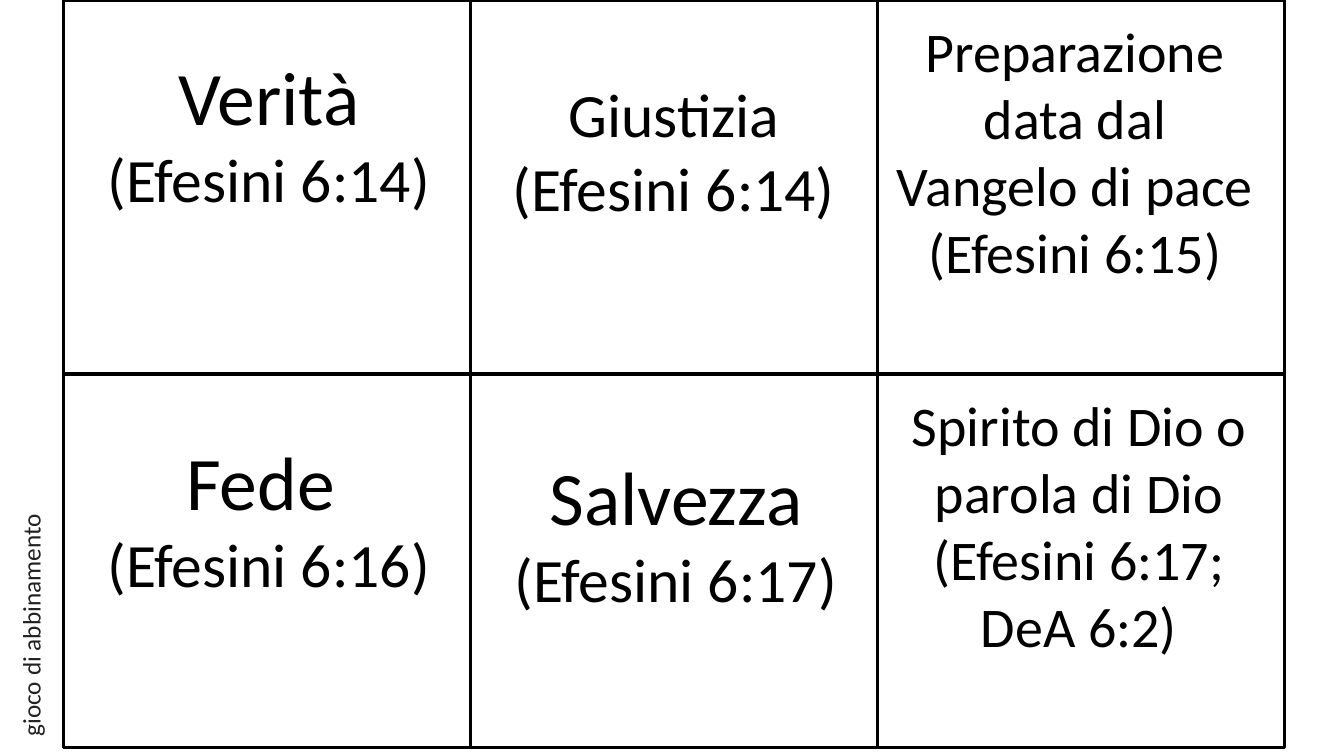
from pptx import Presentation
from pptx.dml.color import RGBColor
from pptx.enum.shapes import MSO_SHAPE
from pptx.enum.text import MSO_ANCHOR, MSO_AUTO_SIZE, PP_ALIGN
from pptx.util import Inches, Pt

RECTANGLE = MSO_SHAPE.RECTANGLE
TOP = MSO_ANCHOR.TOP
FIT_SHAPE = MSO_AUTO_SIZE.SHAPE_TO_FIT_TEXT
LEFT, CENTER = PP_ALIGN.LEFT, PP_ALIGN.CENTER
TITLE_ONLY = 5

COLORS = {"paper": "FFFFFF", "ink": "000000", "label": "212121"}
COLUMNS, ROWS = 3, 2
GRID_LEFT = 0.63
COLUMN = 12.11 / COLUMNS
ROW = 7.42 / ROWS

BIG, MEDIUM, SMALL = 54, 44, 40

# Each card: left, top, width, height in columns and rows, then paragraphs of (text, size)
CARDS = [
    (0.04, 0.12, 0.93, 0.47, [[("Verità ", BIG), ("(Efesini 6:14)", MEDIUM)]]),
    (0.98, 0.19, 1.04, 0.43, [[("Giustizia (Efesini 6:14)", MEDIUM)]]),
    (2.02, 0.03, 0.93, 0.75,
     [[("Preparazione data dal Vangelo di pace (Efesini 6:15)", SMALL)]]),
    (0.04, 1.15, 0.93, 0.47, [[("Fede ", BIG)], [("(Efesini 6:16)", MEDIUM)]]),
    (1.04, 1.19, 0.93, 0.47, [[("Salvezza ", BIG), ("(Efesini 6:17)", MEDIUM)]]),
    (2.03, 1.03, 0.93, 0.75,
     [[("Spirito di Dio o parola di Dio (Efesini 6:17; DeA 6:2)", SMALL)]]),
]


def color(name):
    return RGBColor.from_string(COLORS[name])


def add_run(paragraph, text, *, size, ink="ink", font="Calibri"):
    run = paragraph.add_run()
    run.text = text
    run.font.name = font
    run.font.size = Pt(size)
    run.font.color.rgb = color(ink)


class CardSheet:
    """Draws on one slide, with lengths in grid columns and rows."""

    def __init__(self, slide, line_width=2.25):
        self.slide = slide
        self.line_width = Pt(line_width)

    def box(self, left, top, width, height):
        return (Inches(GRID_LEFT + left * COLUMN), Inches(top * ROW),
                Inches(width * COLUMN), Inches(height * ROW))

    def cell(self, column, row):
        shape = self.slide.shapes.add_shape(RECTANGLE, *self.box(column, row, 1, 1))
        shape.shadow.inherit = False
        shape.fill.solid()
        shape.fill.fore_color.rgb = color("paper")
        shape.line.color.rgb = color("ink")
        shape.line.width = self.line_width

    def fill_text(self, shape, paragraphs, alignment, ink):
        frame = shape.text_frame
        frame.word_wrap = True
        frame.auto_size = FIT_SHAPE
        frame.vertical_anchor = TOP
        for index, runs in enumerate(paragraphs):
            paragraph = frame.add_paragraph() if index else frame.paragraphs[0]
            paragraph.alignment = alignment
            for text, size in runs:
                add_run(paragraph, text, size=size, ink=ink)

    def card_text(self, left, top, width, height, paragraphs):
        shape = self.slide.shapes.add_textbox(*self.box(left, top, width, height))
        self.fill_text(shape, paragraphs, CENTER, "ink")

    def side_title(self, text, size):
        title = self.slide.shapes.title
        title.left, title.top, title.width, title.height = self.box(-1, 0.94, 1.84, 0.11)
        title.rotation = 270
        self.fill_text(title, [[(text, size)]], LEFT, "label")


def main():
    presentation = Presentation()
    presentation.slide_width = Inches(13.33)
    presentation.slide_height = Inches(7.5)
    slide = presentation.slides.add_slide(presentation.slide_layouts[TITLE_ONLY])
    sheet = CardSheet(slide)

    # Card grid
    for column in range(COLUMNS):
        for row in range(ROWS):
            sheet.cell(column, row)

    # Card wording
    for card in CARDS:
        sheet.card_text(*card)

    # Vertical title along the left edge
    sheet.side_title("gioco di abbinamento", 18)

    presentation.save("out.pptx")


if __name__ == "__main__":
    main()
